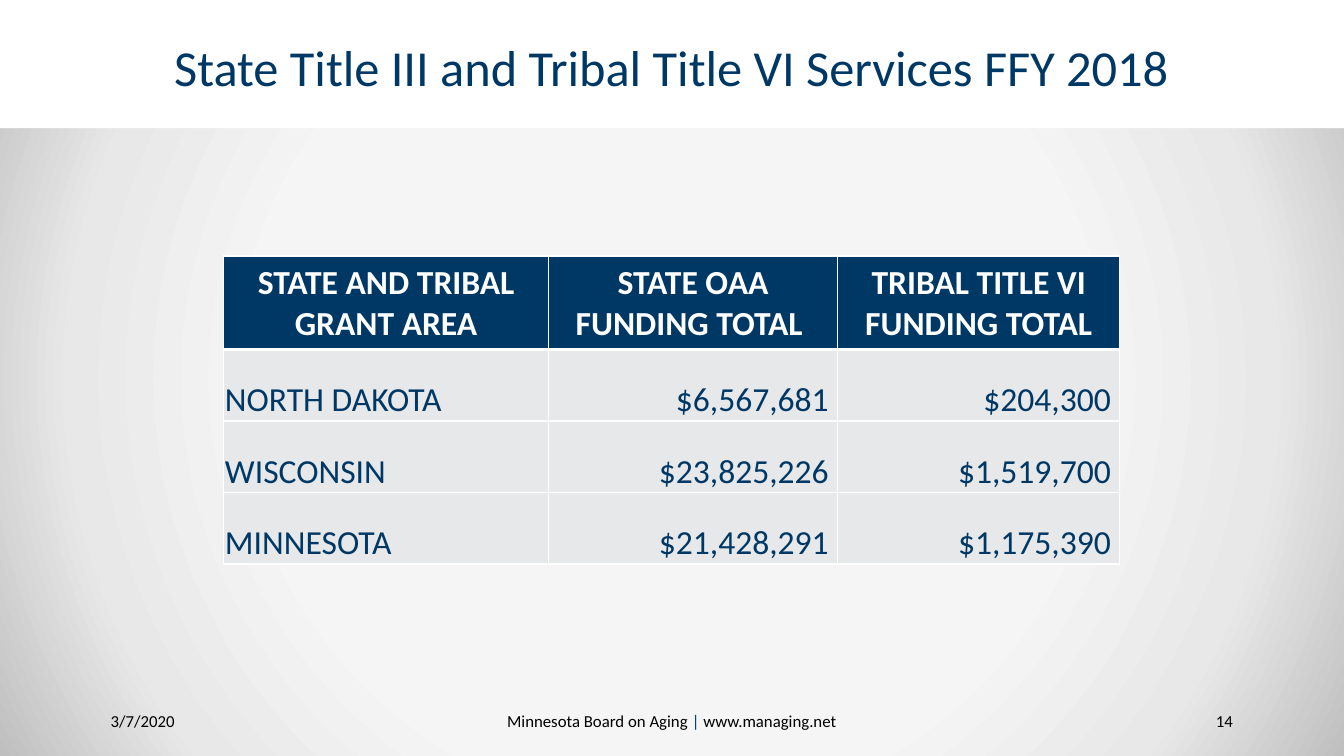
"""Build the slide on state and tribal funding totals."""
from pptx import Presentation
from pptx import util as u
from pptx.dml.color import RGBColor
from pptx.enum import shapes, text
from pptx.oxml import parse_xml
from pptx.oxml.ns import nsdecls

NAVY, WHITE, BLACK, GREY = "003865", "FFFFFF", "000000", "E7E8EA"
LEFT, CENTER, RIGHT = text.PP_ALIGN.LEFT, text.PP_ALIGN.CENTER, text.PP_ALIGN.RIGHT


def color(value):
    return RGBColor.from_string(value)


def add_spans(para, spans, size, align, bold=False):
    para.alignment = align
    for words, shade in spans:
        span = para.add_run()
        span.text = words
        span.font.name = "Calibri"
        span.font.size = u.Pt(size)
        span.font.bold = bold
        span.font.color.rgb = color(shade)


deck = Presentation()
deck.slide_width, deck.slide_height = u.Cm(33.87), u.Cm(19.05)
page = deck.slides.add_slide(deck.slide_layouts[6])

stops = "".join(
    f'<a:gs pos="{place * 1000}"><a:srgbClr val="{shade}"/></a:gs>'
    for place, shade in [(53, "F5F5F5"), (78, "E8E8E8"), (100, "BFBFBF")]
)
page.element.cSld.insert(0, parse_xml(
    f'<p:bg {nsdecls("p", "a")}><p:bgPr><a:gradFill rotWithShape="1">'
    f'<a:gsLst>{stops}</a:gsLst><a:path path="circle">'
    '<a:fillToRect l="50000" t="50000" r="50000" b="50000"/></a:path>'
    '</a:gradFill><a:effectLst/></p:bgPr></p:bg>'
))

band = page.shapes.add_shape(
    shapes.MSO_SHAPE.RECTANGLE, 0, 0, deck.slide_width, u.Cm(3.23))
band.shadow.inherit = False
band.fill.solid()
band.fill.fore_color.rgb = color(WHITE)
band.line.fill.background()

title = [("State Title III and Tribal Title VI Services FFY 2018", NAVY)]
footer = [("Minnesota Board on Aging ", BLACK), ("|", NAVY),
          (" www.managing.net", BLACK)]
labels = [
    (2.54, 0.51, 28.78, 2.54, title, 36, CENTER, 0.9),
    (2.54, 17.65, 3.81, 1.02, [("3/7/2020", BLACK)], 12, LEFT, 1.0),
    (9.17, 17.65, 15.52, 1.02, footer, 12, CENTER, 1.0),
    (27.51, 17.65, 3.81, 1.02, [("14", BLACK)], 12, RIGHT, 1.0),
]
for left, top, width, height, spans, size, align, spacing in labels:
    box = page.shapes.add_textbox(u.Cm(left), u.Cm(top), u.Cm(width), u.Cm(height))
    box.text_frame.word_wrap = True
    box.text_frame.vertical_anchor = text.MSO_ANCHOR.MIDDLE
    para = box.text_frame.paragraphs[0]
    para.line_spacing = spacing
    add_spans(para, spans, size, align)

rows = [
    ["STATE AND TRIBAL GRANT AREA", "STATE OAA FUNDING TOTAL ",
     "TRIBAL TITLE VI FUNDING TOTAL"],
    ["NORTH DAKOTA", "$6,567,681 ", "$204,300 "],
    ["WISCONSIN", "$23,825,226 ", "$1,519,700 "],
    ["MINNESOTA", "$21,428,291 ", "$1,175,390 "],
]
widths = [8.18, 7.29, 7.11]
heights = [2.36, 1.8, 1.8, 1.8]
table = page.shapes.add_table(
    len(rows), len(widths), u.Cm(5.64), u.Cm(6.45),
    u.Cm(sum(widths)), u.Cm(sum(heights))).table
for column, width in zip(table.columns, widths):
    column.width = u.Cm(width)
for row, height in zip(table.rows, heights):
    row.height = u.Cm(height)

for r, row in enumerate(rows):
    header = r == 0
    for c, words in enumerate(row):
        cell = table.cell(r, c)
        cell.margin_left = cell.margin_right = cell.margin_top = u.Cm(0.03)
        cell.margin_bottom = 0
        cell.vertical_anchor = text.MSO_ANCHOR.MIDDLE if header else text.MSO_ANCHOR.BOTTOM
        cell.fill.solid()
        cell.fill.fore_color.rgb = color(NAVY if header else GREY)
        align = CENTER if header else LEFT if c == 0 else RIGHT
        add_spans(cell.text_frame.paragraphs[0],
                  [(words, WHITE if header else NAVY)], 24, align, header)
        borders = {"L": 1, "R": 1, "T": 3 if r == 1 else 1, "B": 3 if header else 1}
        for place, (side, points) in enumerate(borders.items()):
            cell._tc.tcPr.insert(place, parse_xml(
                f'<a:ln{side} {nsdecls("a")} w="{u.Pt(points)}"><a:solidFill>'
                f'<a:srgbClr val="{WHITE}"/></a:solidFill></a:ln{side}>'))

deck.save("out.pptx")
